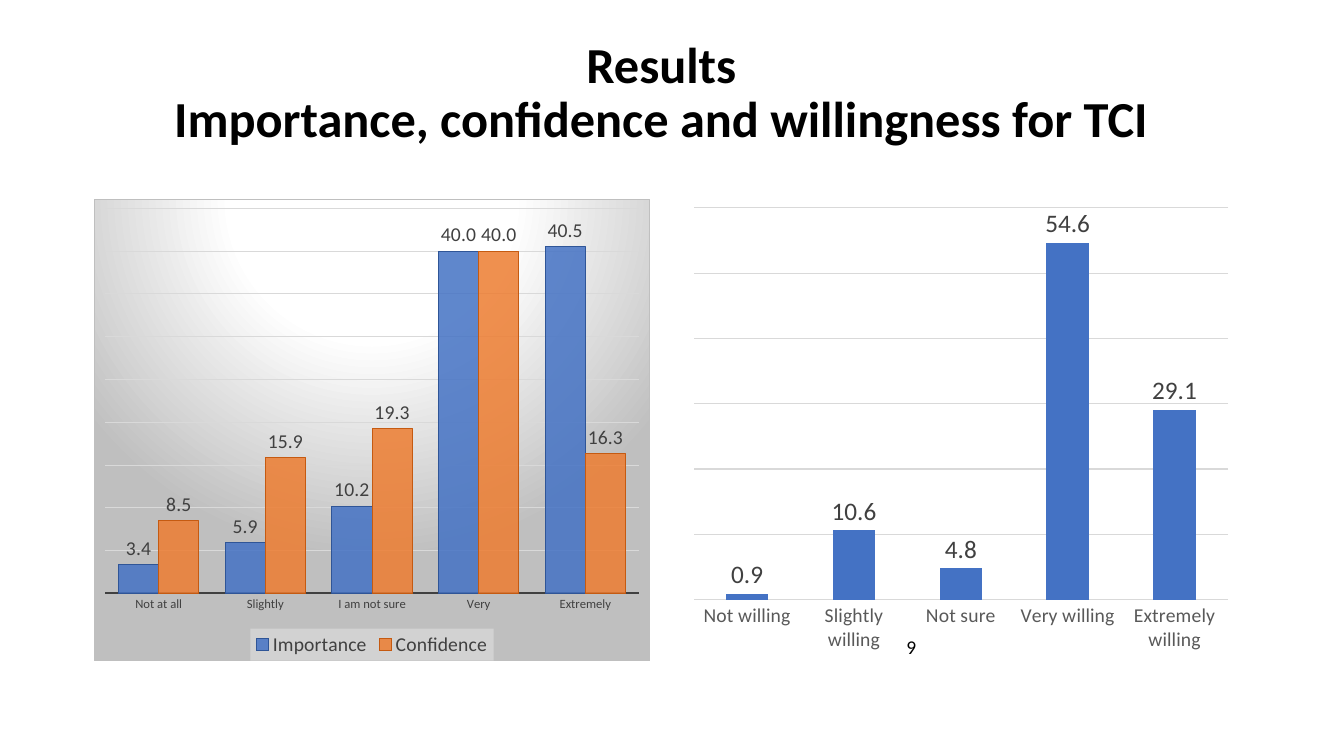
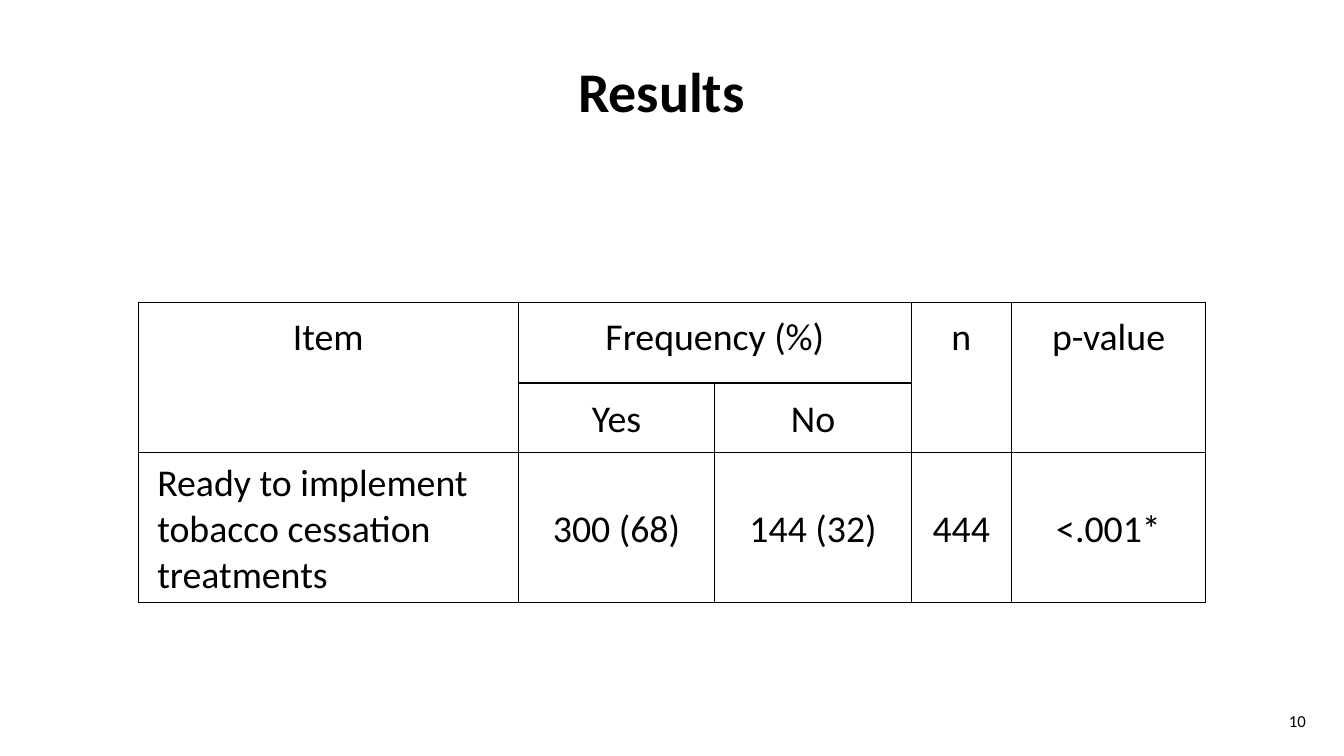
import pptx
import pptx.chart.chart
import pptx.chart.data
import pptx.dml.color
import pptx.enum.chart
import pptx.enum.text
import pptx.oxml
import pptx.oxml.ns
import pptx.slide
import pptx.util
from dataclasses import dataclass
from typing import Optional

Inches, Pt = pptx.util.Inches, pptx.util.Pt
RGB = pptx.dml.color.RGBColor.from_string
ALIGN = pptx.enum.text.PP_ALIGN
ANCHOR = pptx.enum.text.MSO_ANCHOR
qn = pptx.oxml.ns.qn
NS = pptx.oxml.ns.nsdecls("a", "c")


@dataclass(frozen=True)
class Theme:
    font: str = "Calibri"
    black: str = "000000"
    dark: str = "404040"
    grey: str = "595959"
    grid: str = "D9D9D9"
    frame: str = "BFBFBF"
    white: str = "FFFFFF"
    legend: str = "F2F2F2"
    blue: str = "4472C4"
    blue_line: str = "2F5597"
    orange: str = "ED7D31"
    orange_line: str = "C55A11"
    table_size: float = 27
    legend_size: float = 14
    hairline: float = 0.75


T = Theme()


@dataclass(frozen=True)
class Box:
    left: float
    top: float
    width: float
    height: float

    def emu(self) -> tuple:
        return tuple(Inches(v) for v in (self.left, self.top, self.width, self.height))


@dataclass(frozen=True)
class Series:
    name: str
    values: tuple
    color: str
    line: Optional[str] = None


@dataclass(frozen=True)
class ColumnChart:
    left: float
    categories: tuple
    series: tuple
    gap: int
    maximum: float
    unit: float
    label_size: float
    axis_size: float
    axis_color: str
    framed: bool = False


@dataclass(frozen=True)
class Cell:
    row: int
    col: int
    text: str
    rows: int = 1
    cols: int = 1
    align: ALIGN = ALIGN.CENTER
    side: float = 0.19


TITLE_BOX = Box(0.83, 0.3, 11.46, 1.27)
CHART_TOP, CHART_WIDTH, CHART_HEIGHT = 1.97, 5.52, 4.59

CHARTS = (
    ColumnChart(
        6.77,
        ("Not willing", "Slightly willing", "Not sure", "Very willing", "Extremely willing"),
        (Series("Series 1", (0.9, 10.6, 4.8, 54.6, 29.1), T.blue),),
        gap=150, maximum=60, unit=10, label_size=18, axis_size=14, axis_color=T.grey),
    ColumnChart(
        0.93,
        ("Not at all", "Slightly", "I am not sure", "Very", "Extremely"),
        (Series("Importance", (3.4, 5.9, 10.2, 40, 40.5), T.blue, T.blue_line),
         Series("Confidence", (8.5, 15.9, 19.3, 40, 16.3), T.orange, T.orange_line)),
        gap=65, maximum=45, unit=5, label_size=14, axis_size=9, axis_color=T.dark, framed=True),
)

COLUMN_WIDTHS = (3.77, 1.95, 1.95, 0.99, 1.93)
ROW_HEIGHTS = (0.8, 0.58, 1.49)
CELLS = (
    Cell(0, 0, "Item", rows=2),
    Cell(0, 1, "Frequency (%)", cols=2),
    Cell(0, 3, "n", rows=2),
    Cell(0, 4, "p-value", rows=2),
    Cell(1, 1, "Yes"),
    Cell(1, 2, "No"),
    Cell(2, 0, "Ready to implement tobacco cessation treatments", align=ALIGN.LEFT),
    Cell(2, 1, "300 (68)"),
    Cell(2, 2, "144 (32)"),
    Cell(2, 3, "444", side=0.03),
    Cell(2, 4, "<.001*"),
)


# Text
def style_font(font, size: float, color: str, bold: bool = False) -> None:
    font.name, font.size, font.bold = T.font, Pt(size), bold
    font.color.rgb = RGB(color)


def write(tf, text: str, size: float, align: ALIGN, bold: bool = False):
    p = tf.paragraphs[0]
    p.text = text
    p.alignment = align
    for r in p.runs:
        style_font(r.font, size, T.black, bold)
    return p


def add_text(slide: pptx.slide.Slide, box: Box, text: str, size: float,
             align: ALIGN, anchor: ANCHOR = ANCHOR.MIDDLE, bold: bool = False):
    tf = slide.shapes.add_textbox(*box.emu()).text_frame
    tf.word_wrap = True
    tf.vertical_anchor = anchor
    return write(tf, text, size, align, bold)


def add_title(slide: pptx.slide.Slide, text: str, size: float) -> None:
    p = add_text(slide, TITLE_BOX, text, size, ALIGN.CENTER, bold=True)
    p.line_spacing = 0.9


# Charts
def add_area_format(parent, content: str) -> None:
    """Put a shape format just before the text format of a chart part."""
    sp_pr = pptx.oxml.parse_xml(f"<c:spPr {NS}>{content}</c:spPr>")
    parent.find(qn("c:txPr")).addprevious(sp_pr)


def frame_format() -> str:
    stops = "".join(
        f'<a:gs pos="{pos * 1000}"><a:srgbClr val="{color}"/></a:gs>'
        for pos, color in ((0, T.white), (39, T.white), (100, T.frame)))
    return (f'<a:gradFill><a:gsLst>{stops}</a:gsLst><a:path path="circle">'
            '<a:fillToRect l="50000" t="-80000" r="50000" b="180000"/></a:path></a:gradFill>'
            f'<a:ln w="{Pt(T.hairline)}"><a:solidFill><a:srgbClr val="{T.frame}"/>'
            '</a:solidFill></a:ln>')


def add_legend(chart: pptx.chart.chart.Chart) -> None:
    chart.has_legend = True
    legend = chart.legend
    legend.position = pptx.enum.chart.XL_LEGEND_POSITION.BOTTOM
    legend.include_in_layout = False
    style_font(legend.font, T.legend_size, T.dark)
    add_area_format(legend._element, f'<a:solidFill><a:srgbClr val="{T.legend}">'
                    '<a:alpha val="39000"/></a:srgbClr></a:solidFill>')


def format_axes(chart: pptx.chart.chart.Chart, design: ColumnChart) -> None:
    values, cats = chart.value_axis, chart.category_axis
    values.minimum_scale, values.maximum_scale = 0, design.maximum
    values.major_unit = design.unit
    values.has_major_gridlines = True
    values.major_gridlines.format.line.color.rgb = RGB(T.grid)
    values.major_gridlines.format.line.width = Pt(T.hairline)
    values.visible = False
    cats.major_tick_mark = pptx.enum.chart.XL_TICK_MARK.NONE
    style_font(cats.tick_labels.font, design.axis_size, design.axis_color)
    if design.framed:
        cats.format.line.color.rgb = RGB(T.dark)
        cats.format.line.width = Pt(1.5)
    else:
        cats.format.line.fill.background()


def format_series(plot, design: ColumnChart) -> None:
    for s, item in zip(plot.series, design.series):
        s.format.fill.solid()
        s.format.fill.fore_color.rgb = RGB(item.color)
        if item.line:
            color = s._element.find(".//" + qn("a:srgbClr"))
            color.append(pptx.oxml.parse_xml(f'<a:alpha {NS} val="85000"/>'))
            s.format.line.color.rgb = RGB(item.line)
            s.format.line.width = Pt(T.hairline)
        labels = s.data_labels
        labels.show_value = True
        labels.number_format, labels.number_format_is_linked = "0.0", False
        labels.position = pptx.enum.chart.XL_LABEL_POSITION.OUTSIDE_END
        style_font(labels.font, design.label_size, T.dark)


def add_column_chart(slide: pptx.slide.Slide, design: ColumnChart) -> None:
    data = pptx.chart.data.CategoryChartData(number_format="0.0")
    data.categories = design.categories
    for item in design.series:
        data.add_series(item.name, item.values)
    box = Box(design.left, CHART_TOP, CHART_WIDTH, CHART_HEIGHT)
    chart = slide.shapes.add_chart(
        pptx.enum.chart.XL_CHART_TYPE.COLUMN_CLUSTERED, *box.emu(), data).chart
    chart.has_title = False
    style_font(chart.font, 10, T.black)
    plot = chart.plots[0]
    plot.gap_width, plot.overlap, plot.vary_by_categories = design.gap, 0, False
    format_axes(chart, design)
    format_series(plot, design)
    if design.framed:
        add_legend(chart)
        add_area_format(chart._chartSpace, frame_format())
    else:
        chart.has_legend = False
        add_area_format(chart._chartSpace, "<a:noFill/><a:ln><a:noFill/></a:ln>")


# Table
def outline_cell(cell) -> None:
    tc_pr = cell._tc.get_or_add_tcPr()
    for side in ("lnL", "lnR", "lnT", "lnB"):
        tc_pr.append(pptx.oxml.parse_xml(
            f'<a:{side} {NS} w="{Pt(1)}"><a:solidFill><a:srgbClr val="{T.black}"/>'
            f'</a:solidFill></a:{side}>'))
    cell.fill.background()


def add_results_table(slide: pptx.slide.Slide) -> None:
    box = Box(1.37, 3, sum(COLUMN_WIDTHS), sum(ROW_HEIGHTS))
    table = slide.shapes.add_table(len(ROW_HEIGHTS), len(COLUMN_WIDTHS), *box.emu()).table
    table.first_row = table.horz_banding = False
    for column, width in zip(table.columns, COLUMN_WIDTHS):
        column.width = Inches(width)
    for row, height in zip(table.rows, ROW_HEIGHTS):
        row.height = Inches(height)
    for cell in table.iter_cells():
        outline_cell(cell)
    for item in CELLS:
        cell = table.cell(item.row, item.col)
        if item.rows * item.cols > 1:
            cell.merge(table.cell(item.row + item.rows - 1, item.col + item.cols - 1))
        header = item.row == 0
        side, top, bottom = (0.25, 0.12, 0.12) if header else (item.side, 0.03, 0)
        cell.margin_left = cell.margin_right = Inches(side)
        cell.margin_top, cell.margin_bottom = Inches(top), Inches(bottom)
        cell.vertical_anchor = ANCHOR.TOP if header else ANCHOR.MIDDLE
        write(cell.text_frame, item.text, T.table_size, item.align)


# Slides
def main() -> None:
    prs = pptx.Presentation()
    prs.slide_width, prs.slide_height = Inches(13.33), Inches(7.5)
    blank = prs.slide_layouts[6]

    s = prs.slides.add_slide(blank)
    add_title(s, "Results\nImportance, confidence and willingness for TCI", 36)
    add_text(s, Box(8.89, 6.25, 2.31, 0.31), "9", 13.9, ALIGN.LEFT, ANCHOR.TOP)
    for design in CHARTS:
        add_column_chart(s, design)

    s = prs.slides.add_slide(blank)
    add_title(s, "Results", 40)
    add_text(s, Box(9.55, 6.95, 3.5, 0.4), "10", 12, ALIGN.RIGHT)
    add_results_table(s)

    prs.save("out.pptx")


if __name__ == "__main__":
    main()
